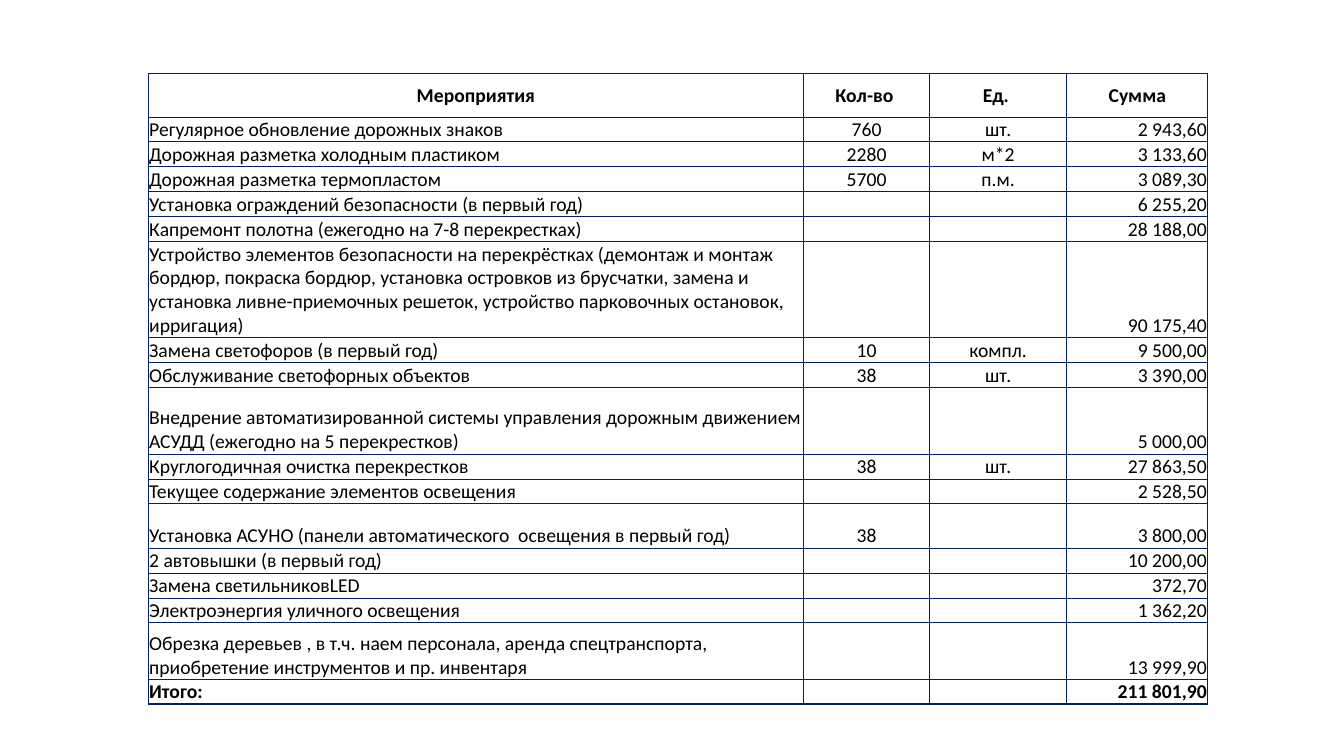
from dataclasses import dataclass

from lxml import etree
from pptx import Presentation
from pptx import util as u
from pptx.dml.color import RGBColor
from pptx.enum import text
from pptx.oxml.ns import qn


@dataclass(frozen=True)
class Theme:
    font: str = "Calibri"
    size: int = 14
    ink: str = "000000"
    rule: str = "002060"
    thin: float = 0.5
    thick: float = 1


@dataclass(frozen=True)
class Row:
    work: str
    count: str = ""
    unit: str = ""
    cost: str = ""
    high: float = 0.22
    bold: bool = False

    def texts(self) -> tuple[str, ...]:
        return self.work, self.count, self.unit, self.cost


THEME = Theme()
LEFT, TOP = 1.47, 0.73
COLS = (6.5, 1.25, 1.36, 1.4)
ALIGN = text.PP_ALIGN
SIDES = (ALIGN.LEFT, ALIGN.CENTER, ALIGN.CENTER, ALIGN.RIGHT)
ROWS = (
    Row("Мероприятия", "Кол-во ", "Ед. ", " Сумма ", 0.43, True),
    Row("Регулярное обновление дорожных знаков", "760", "шт.", "2 943,60"),
    Row("Дорожная разметка холодным пластиком", "2280", "м*2", "3 133,60"),
    Row("Дорожная разметка термопластом", "5700", "п.м.", "3 089,30"),
    Row("Установка ограждений безопасности (в первый год)", cost="6 255,20"),
    Row("Капремонт полотна (ежегодно на 7-8 перекрестках)", cost="28 188,00"),
    Row("Устройство элементов безопасности на перекрёстках (демонтаж и монтаж "
        "бордюр, покраска бордюр, установка островков из брусчатки, замена и "
        "установка ливне-приемочных решеток, устройство парковочных остановок, "
        "ирригация)", cost="90 175,40", high=0.76),
    Row("Замена светофоров (в первый год)", "10", "компл.", "9 500,00"),
    Row("Обслуживание светофорных объектов", "38", "шт.", "3 390,00"),
    Row("Внедрение автоматизированной системы управления дорожным движением "
        "АСУДД (ежегодно на 5 перекрестков)", cost="5 000,00", high=0.66),
    Row("Круглогодичная очистка перекрестков", "38", "шт.", "27 863,50"),
    Row("Текущее содержание элементов освещения", cost="2 528,50"),
    Row("Установка АСУНО (панели автоматического  освещения в первый год)",
        "38", cost="3 800,00", high=0.44),
    Row("2 автовышки (в первый год)", cost="10 200,00"),
    Row("Замена светильниковLED", cost="372,70"),
    Row("Электроэнергия уличного освещения", cost="1 362,20"),
    Row("Обрезка деревьев , в т.ч. наем персонала, аренда спецтранспорта, "
        "приобретение инструментов и пр. инвентаря", cost="13 999,90", high=0.56),
    Row("Итого:", cost="211 801,90", high=0.23, bold=True),
)


def edge(cell, outer: dict[str, bool]) -> None:
    """Rule each side of a cell, thicker on the rim of the table."""
    props = cell._tc.get_or_add_tcPr()
    for side, rim in outer.items():
        width = u.Pt(THEME.thick if rim else THEME.thin)
        line = etree.SubElement(props, qn(f"a:ln{side}"), w=str(width))
        fill = etree.SubElement(line, qn("a:solidFill"))
        etree.SubElement(fill, qn("a:srgbClr"), val=THEME.rule)


def write(cell, words: str, side: ALIGN, bold: bool, head: bool) -> None:
    cell.margin_left = cell.margin_right = cell.margin_top = u.Inches(0.01)
    cell.margin_bottom = 0
    anchor = text.MSO_ANCHOR
    cell.vertical_anchor = anchor.MIDDLE if head else anchor.BOTTOM
    para = cell.text_frame.paragraphs[0]
    para.alignment = side
    font = para.font
    font.name, font.size, font.bold = THEME.font, u.Pt(THEME.size), bold
    font.color.rgb = RGBColor.from_string(THEME.ink)
    if words:
        para.add_run().text = words
    else:
        # An empty cell takes its line height from the end mark.
        etree.SubElement(para._p, qn("a:endParaRPr"), sz=str(THEME.size * 100))


def draw(slide) -> None:
    frame = slide.shapes.add_table(
        len(ROWS), len(COLS), u.Inches(LEFT), u.Inches(TOP),
        u.Inches(sum(COLS)), u.Inches(sum(row.high for row in ROWS)))
    table = frame.table
    table.first_row = table.horz_banding = False
    for col, width in zip(table.columns, COLS):
        col.width = u.Inches(width)
    for r, row in enumerate(ROWS):
        table.rows[r].height = u.Inches(row.high)
        head = r == 0
        for c, words in enumerate(row.texts()):
            cell = table.cell(r, c)
            edge(cell, {"L": c == 0, "R": c == len(COLS) - 1,
                        "T": head, "B": r == len(ROWS) - 1})
            cell.fill.background()
            side = ALIGN.CENTER if head else SIDES[c]
            write(cell, words, side, row.bold, head)


def main() -> None:
    deck = Presentation()
    deck.slide_width, deck.slide_height = u.Inches(13.33), u.Inches(7.5)
    draw(deck.slides.add_slide(deck.slide_layouts[6]))
    deck.save("out.pptx")


if __name__ == "__main__":
    main()
